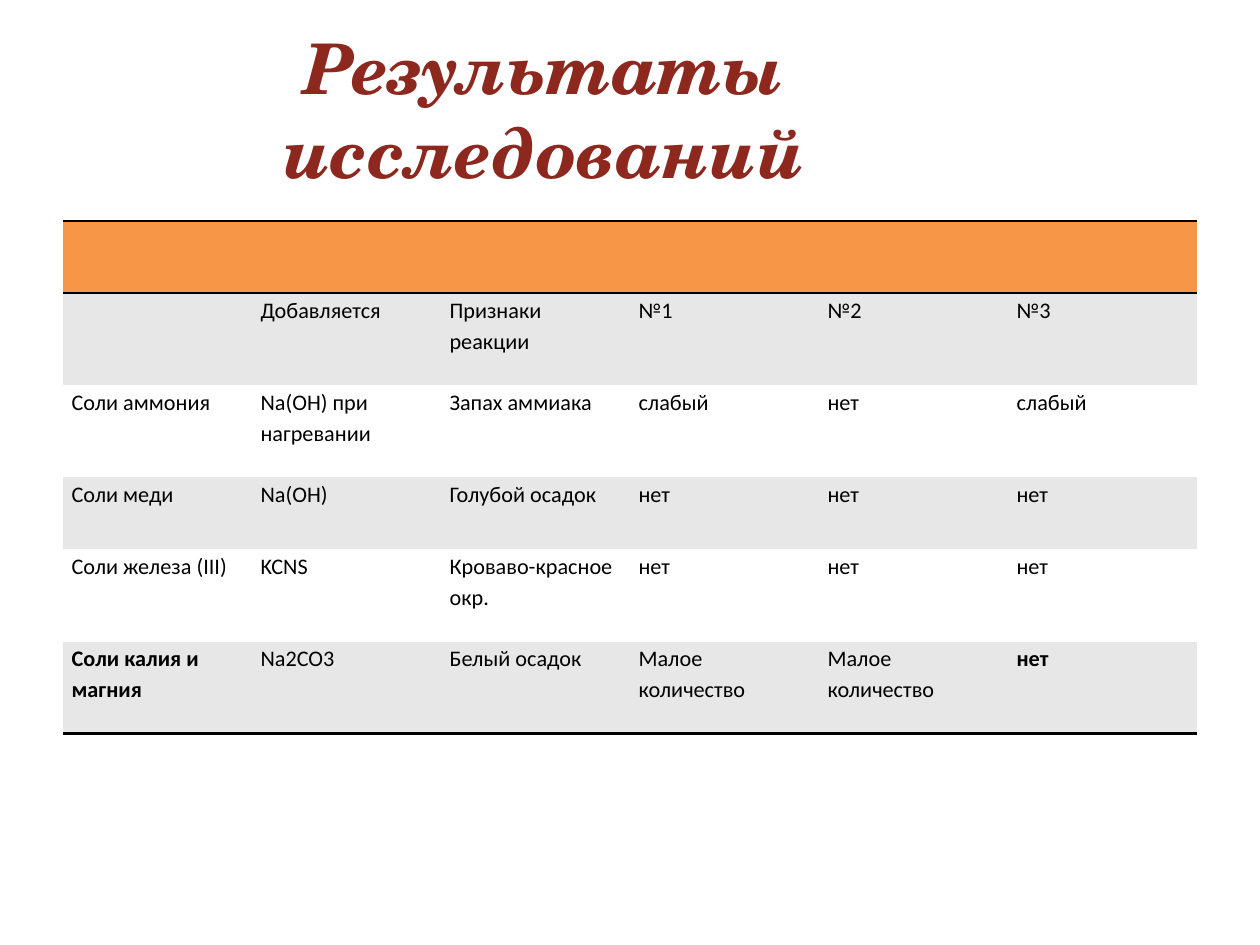
from dataclasses import dataclass

from lxml import etree
from pptx import Presentation
from pptx import util as u
from pptx.dml.color import RGBColor
from pptx.enum import text
from pptx.oxml import ns


@dataclass(frozen=True)
class Theme:
    title_font: str = "TeX Gyre Schola"
    body_font: str = "Calibri"
    title_size: int = 44
    body_size: int = 14
    title: str = "8D281E"
    ink: str = "000000"
    header: str = "F79646"
    bands: tuple = ("E7E7E7", "FFFFFF")
    rule: int = 2


THEME = Theme()
# Lengths are in centimetres.
WIDTH, HEIGHT = 28, 21
MARGIN = WIDTH * 0.05
NO_STYLE = "{2D5ABB26-0587-4C30-8999-92F81FD0307C}"

SHORT, TALL = 1.6, 2.05
ROW_HEIGHTS = [SHORT, TALL, TALL, SHORT, TALL, TALL]
RESULTS = [
    [""] * 6,
    ["", "Добавляется", "Признаки реакции", "№1", "№2", "№3"],
    ["Соли аммония", "Na(OH) при нагревании", "Запах аммиака", "слабый", "нет", "слабый"],
    ["Соли меди", "Na(OH)", "Голубой осадок", "нет", "нет", "нет"],
    ["Соли железа (III)", "KCNS", "Кроваво-красное окр.", "нет", "нет", "нет"],
    ["Соли калия и магния", "Na2CO3", "Белый осадок", "Малое количество",
     "Малое количество", "нет"],
]
LAST_ROW, LAST_COL = len(RESULTS) - 1, len(RESULTS[0]) - 1
BOLD_CELLS = {(LAST_ROW, 0), (LAST_ROW, LAST_COL)}


def set_attrs(obj, values):
    for name, value in values.items():
        setattr(obj, name, value)


def write(p, words, color, **font):
    r = p.add_run()
    r.text = words
    set_attrs(r.font, font)
    r.font.color.rgb = RGBColor.from_string(color)


def rule_cell(cell, sides):
    """Draw lines on the sides named T and B, ahead of the cell's fill."""
    tc_pr = cell._tc.get_or_add_tcPr()
    for i, side in enumerate(sides):
        ln = etree.Element(ns.qn(f"a:ln{side}"), w=str(u.Pt(THEME.rule)))
        fill = etree.SubElement(ln, ns.qn("a:solidFill"))
        etree.SubElement(fill, ns.qn("a:srgbClr"), val=THEME.ink)
        tc_pr.insert(i, ln)


def add_title(slide, left, top, width, height):
    sp = slide.shapes.add_textbox(*map(u.Cm, (left, top, width, height)))
    tf = sp.text_frame
    set_attrs(tf, dict(word_wrap=True, vertical_anchor=text.MSO_ANCHOR.MIDDLE,
                       margin_left=0, margin_right=0, margin_top=0, margin_bottom=0))
    p = tf.paragraphs[0]
    p.alignment = text.PP_ALIGN.CENTER
    write(p, "Результаты исследований", THEME.title, name=THEME.title_font,
          size=u.Pt(THEME.title_size), bold=True, italic=True)


def add_results(slide, left, top, width):
    frame = slide.shapes.add_table(
        len(RESULTS), len(RESULTS[0]),
        *map(u.Cm, (left, top, width, sum(ROW_HEIGHTS))))
    table = frame.table
    set_attrs(table, dict(first_row=False, horz_banding=False))
    table._tbl.tblPr.find(ns.qn("a:tableStyleId")).text = NO_STYLE

    for i, (row, height) in enumerate(zip(RESULTS, ROW_HEIGHTS)):
        table.rows[i].height = u.Cm(height)
        color = THEME.bands[(i - 1) % 2] if i else THEME.header
        sides = {0: "TB", LAST_ROW: "B"}.get(i, "")
        for j, words in enumerate(row):
            cell = table.cell(i, j)
            set_attrs(cell, dict(margin_left=u.Cm(0.19), margin_right=u.Cm(0.19),
                                 margin_top=0, margin_bottom=0))
            cell.fill.solid()
            cell.fill.fore_color.rgb = RGBColor.from_string(color)
            rule_cell(cell, sides)
            if words:
                p = cell.text_frame.paragraphs[0]
                p.line_spacing = 1.15
                write(p, words, THEME.ink, name=THEME.body_font,
                      size=u.Pt(THEME.body_size), bold=(i, j) in BOLD_CELLS)


def main():
    prs = Presentation()
    prs.slide_width = u.Cm(WIDTH)
    prs.slide_height = u.Cm(HEIGHT)
    slide = prs.slides.add_slide(prs.slide_layouts[6])
    add_title(slide, MARGIN, 0.83, 21.4, 3.18)
    add_results(slide, MARGIN, 4.91, WIDTH - 2 * MARGIN)
    prs.save("out.pptx")


if __name__ == "__main__":
    main()
